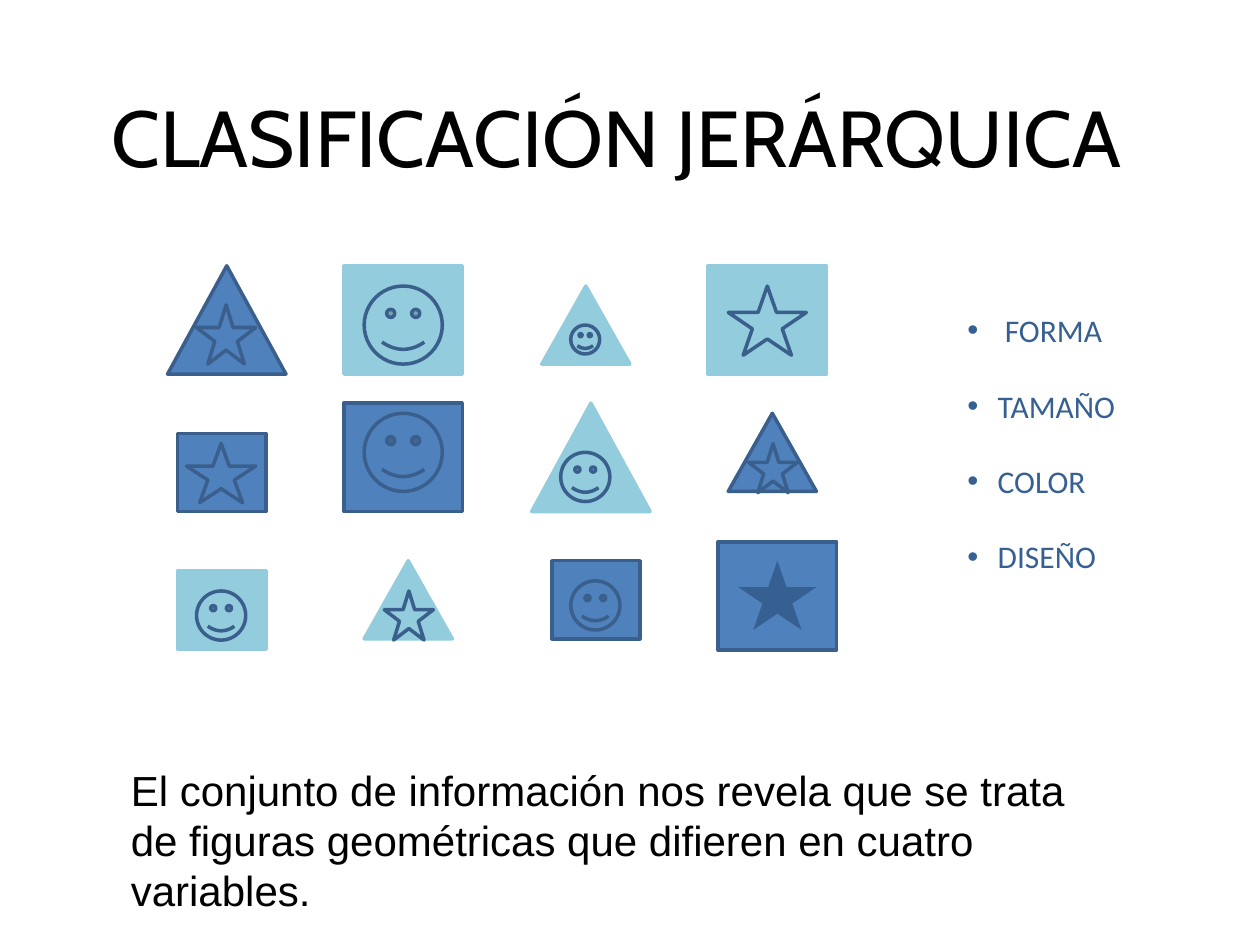
from typing import NamedTuple

from lxml.etree import SubElement
from pptx import Presentation
from pptx.dml.color import RGBColor
from pptx.enum.shapes import MSO_SHAPE
from pptx.enum.text import PP_ALIGN
from pptx.oxml.ns import qn
from pptx.util import Inches, Pt

BLACK = RGBColor(0x00, 0x00, 0x00)
BLUE = RGBColor(0x4F, 0x81, 0xBD)
LIGHT_BLUE = RGBColor(0x93, 0xCD, 0xDD)
OUTLINE_BLUE = RGBColor(0x3A, 0x5F, 0x8C)
DEEP_BLUE = RGBColor(0x37, 0x60, 0x92)

TRIANGLE = MSO_SHAPE.ISOSCELES_TRIANGLE
SQUARE = MSO_SHAPE.RECTANGLE
STAR = MSO_SHAPE.STAR_5_POINT
FACE = MSO_SHAPE.SMILEY_FACE

LARGE = (0.94, 0.86)
SMALL = (0.70, 0.62)
EDGES = {BLUE: OUTLINE_BLUE, LIGHT_BLUE: LIGHT_BLUE}


class Frame(NamedTuple):
    left: float
    top: float
    width: float
    height: float


class Figure(NamedTuple):
    """An outer form with a design inside it."""
    form: MSO_SHAPE
    left: float
    top: float
    size: tuple[float, float]
    color: RGBColor
    design: MSO_SHAPE
    design_frame: Frame
    solid: bool = False


FIGURES = [
    Figure(TRIANGLE, 1.33, 2.11, LARGE, BLUE, STAR, Frame(1.56, 2.42, 0.47, 0.47)),
    Figure(SQUARE, 2.73, 2.11, LARGE, LIGHT_BLUE, FACE, Frame(2.89, 2.27, 0.62, 0.62)),
    Figure(TRIANGLE, 4.30, 2.27, SMALL, LIGHT_BLUE, FACE, Frame(4.53, 2.58, 0.23, 0.23)),
    Figure(SQUARE, 5.62, 2.11, LARGE, LIGHT_BLUE, STAR, Frame(5.78, 2.27, 0.62, 0.55)),
    Figure(SQUARE, 1.41, 3.44, SMALL, BLUE, STAR, Frame(1.48, 3.52, 0.55, 0.47)),
    Figure(SQUARE, 2.73, 3.20, LARGE, BLUE, FACE, Frame(2.89, 3.28, 0.62, 0.62)),
    Figure(TRIANGLE, 4.22, 3.20, LARGE, LIGHT_BLUE, FACE, Frame(4.45, 3.59, 0.39, 0.39)),
    Figure(TRIANGLE, 5.78, 3.28, SMALL, BLUE, STAR, Frame(5.94, 3.52, 0.39, 0.39)),
    Figure(SQUARE, 1.41, 4.53, SMALL, LIGHT_BLUE, FACE, Frame(1.56, 4.69, 0.39, 0.39)),
    Figure(TRIANGLE, 2.89, 4.45, SMALL, LIGHT_BLUE, STAR, Frame(3.05, 4.69, 0.39, 0.39)),
    Figure(SQUARE, 4.38, 4.45, SMALL, BLUE, FACE, Frame(4.53, 4.61, 0.39, 0.39)),
    Figure(SQUARE, 5.70, 4.30, LARGE, BLUE, STAR, Frame(5.86, 4.45, 0.62, 0.55), solid=True),
]
VARIABLES = [" FORMA", "TAMAÑO", "COLOR", "DISEÑO"]


def add_form(page, kind: MSO_SHAPE, frame: Frame, fill: RGBColor, edge: RGBColor | None) -> None:
    shape = page.shapes.add_shape(kind, *map(Inches, frame))
    shape.shadow.inherit = False
    shape.fill.solid()
    shape.fill.fore_color.rgb = fill
    if edge is None:
        shape.line.fill.background()
    else:
        shape.line.color.rgb = edge
        shape.line.width = Pt(2)


def add_figure(page, figure: Figure) -> None:
    frame = Frame(figure.left, figure.top, *figure.size)
    add_form(page, figure.form, frame, figure.color, EDGES[figure.color])
    fill, edge = (DEEP_BLUE, None) if figure.solid else (figure.color, OUTLINE_BLUE)
    add_form(page, figure.design, figure.design_frame, fill, edge)


def add_text(page, frame: Frame, lines: list[str], font: str, size: float, color: RGBColor):
    """Add a wrapped text box with one paragraph per line and return its text frame."""
    box = page.shapes.add_textbox(*map(Inches, frame))
    text = box.text_frame
    text.word_wrap = True
    for index, line in enumerate(lines):
        para = text.paragraphs[0] if index == 0 else text.add_paragraph()
        span = para.add_run()
        span.text = line
        span.font.name = font
        span.font.size = Pt(size)
        span.font.color.rgb = color
    return text


def add_bullet(para) -> None:
    properties = para._p.get_or_add_pPr()
    properties.set("marL", str(Inches(0.24)))
    properties.set("indent", str(Inches(-0.24)))
    SubElement(properties, qn("a:buFont"), typeface="Arial")
    SubElement(properties, qn("a:buChar"), char="•")


def main() -> None:
    deck = Presentation()
    deck.slide_width, deck.slide_height = Inches(10), Inches(7.5)
    page = deck.slides.add_slide(deck.slide_layouts[6])

    title = add_text(page, Frame(0.39, 0.62, 9, 1.08), ["CLASIFICACIÓN JERÁRQUICA"],
                     "Cabin", 45.3, BLACK)
    title.margin_top = Inches(0.08)
    title.paragraphs[0].alignment = PP_ALIGN.CENTER

    for figure in FIGURES:
        add_figure(page, figure)

    summary = add_text(page, Frame(0.94, 6.02, 7.97, 1.31), [
        "El conjunto de información nos revela que se trata de figuras geométricas "
        "que difieren en cuatro variables."], "Arial", 24, BLACK)
    summary.paragraphs[0].line_spacing = Pt(28.6)

    variables = add_text(page, Frame(7.58, 2.42, 1.64, 2.22), VARIABLES, "Calibri", 18, DEEP_BLUE)
    for index, para in enumerate(variables.paragraphs):
        para.space_before = Pt(21.5 if index else 0)
        add_bullet(para)

    deck.save("out.pptx")


if __name__ == "__main__":
    main()
